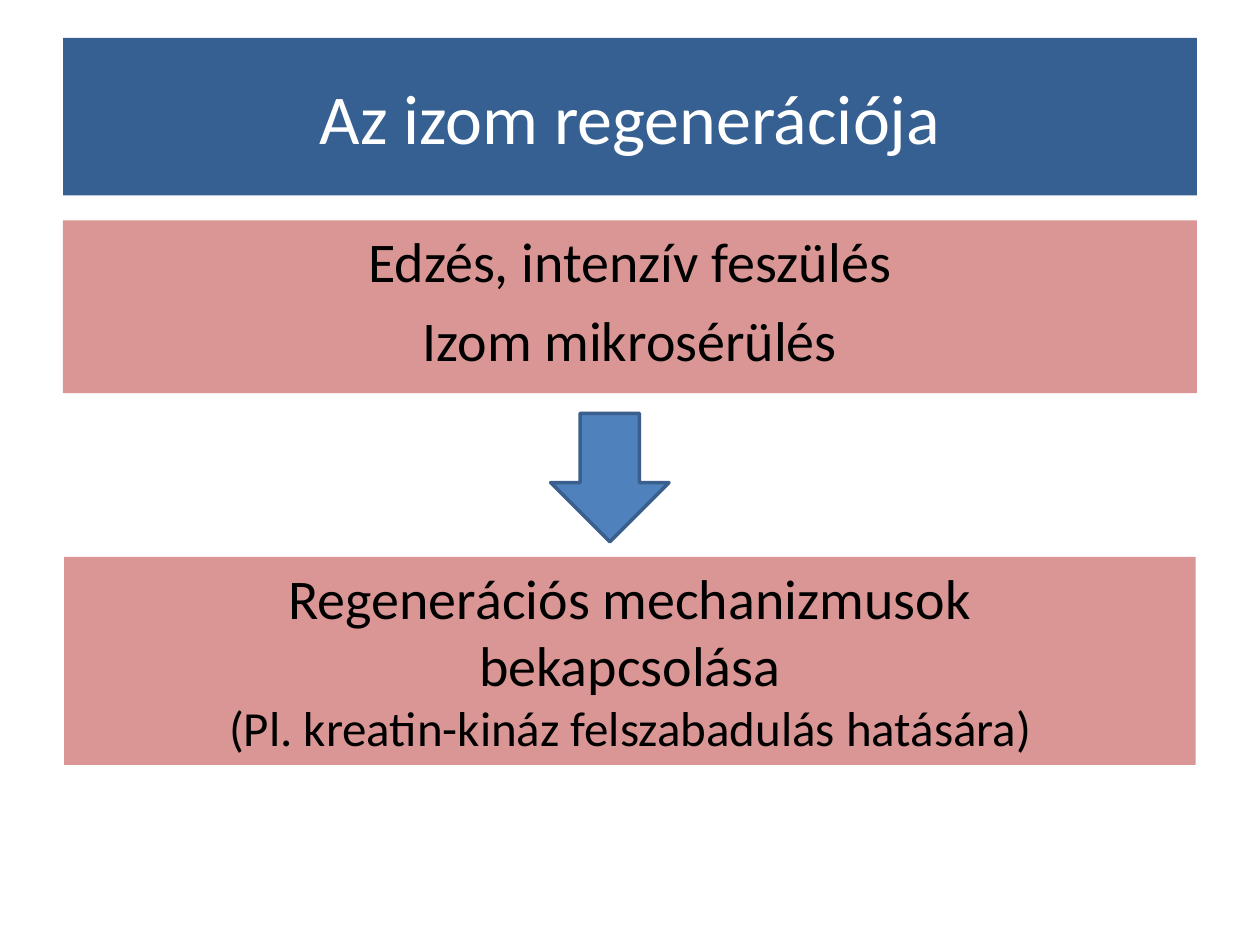
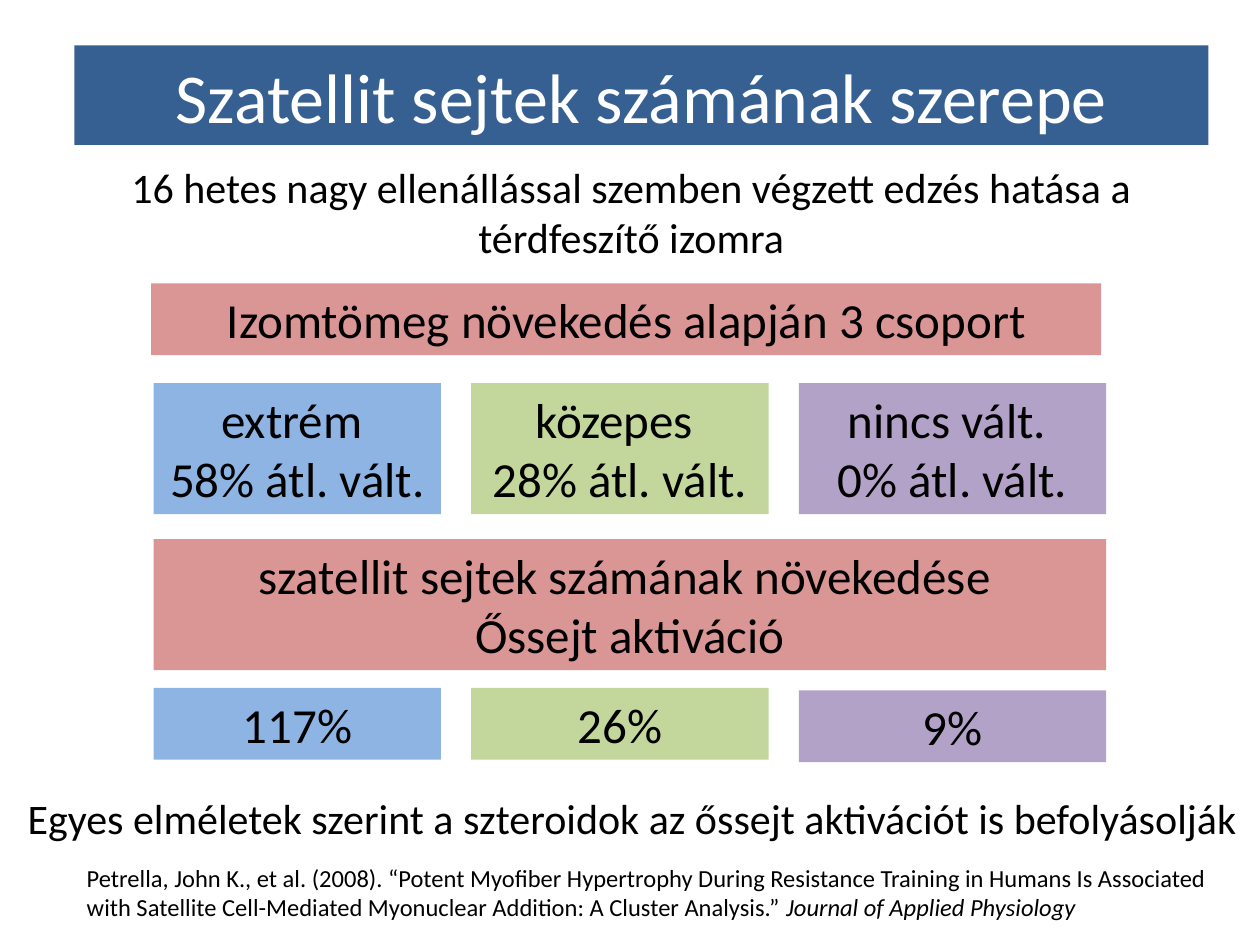
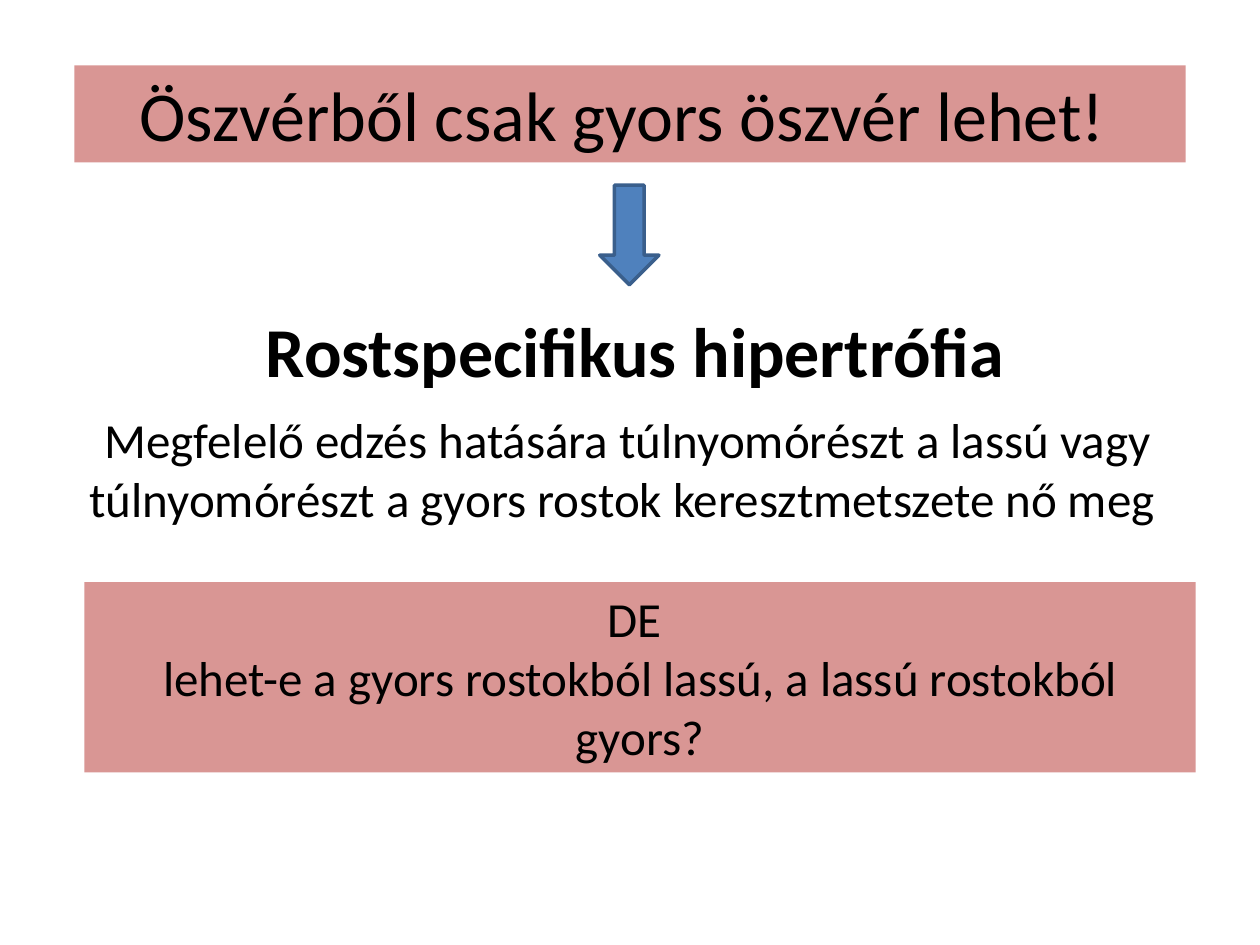
from pptx import Presentation
from pptx.dml.color import RGBColor
from pptx.enum.shapes import MSO_SHAPE
from pptx.enum.text import MSO_ANCHOR, MSO_AUTO_SIZE, PP_ALIGN
from pptx.util import Inches, Pt

RECTANGLE, DOWN_ARROW = MSO_SHAPE.RECTANGLE, MSO_SHAPE.DOWN_ARROW
TOP, MIDDLE = MSO_ANCHOR.TOP, MSO_ANCHOR.MIDDLE
LEFT, CENTER = PP_ALIGN.LEFT, PP_ALIGN.CENTER
FIXED_SIZE = MSO_AUTO_SIZE.NONE

COLORS = {
    "band": "376092", "panel": "D99694", "arrow": "4F81BD", "outline": "3A5F8C",
    "extreme": "8EB4E3", "medium": "C3D69B", "unchanged": "B3A2C7",
    "dark": "000000", "light": "FFFFFF",
}
FONT = "Calibri"
COLUMNS, ROWS = 100, 75
TITLE_ONLY = 5


class SlideBuilder:
    """Hold the shared style and the current slide, and place elements on a grid."""

    def __init__(self):
        self.deck = Presentation()
        self.deck.slide_width, self.deck.slide_height = Inches(10), Inches(7.5)
        self.slide = None

    def new_slide(self):
        self.slide = self.deck.slides.add_slide(self.deck.slide_layouts[TITLE_ONLY])

    def area(self, left, top, width, height):
        column = self.deck.slide_width / COLUMNS
        row = self.deck.slide_height / ROWS
        return [round(length) for length in
                (left * column, top * row, width * column, height * row)]

    def paint(self, shape, color):
        shape.fill.solid()
        shape.fill.fore_color.rgb = RGBColor.from_string(COLORS[color])

    def style(self, span, size, color="dark", bold=False, italic=False):
        span.font.name, span.font.size = FONT, Pt(size)
        span.font.bold, span.font.italic = bold, italic
        span.font.color.rgb = RGBColor.from_string(COLORS[color])

    def fill_text(self, shape, text, size, color="dark", bold=False,
                  align=CENTER, anchor=TOP, gap=0):
        frame = shape.text_frame
        frame.text = text
        frame.word_wrap, frame.auto_size = True, FIXED_SIZE
        frame.vertical_anchor = anchor
        for index, para in enumerate(frame.paragraphs):
            para.alignment = align
            para.space_before = Pt(gap if index else 0)
            for span in para.runs:
                self.style(span, size, color, bold)
        return frame.paragraphs

    def title(self, text, area, fill=None, color="light", bold=False):
        title = self.slide.shapes.title
        title.left, title.top, title.width, title.height = self.area(*area)
        if fill:
            self.paint(title, fill)
        self.fill_text(title, text, 40, color, bold, anchor=MIDDLE)

    def shape(self, kind, area, fill):
        shape = self.slide.shapes.add_shape(kind, *self.area(*area))
        shape.shadow.inherit = False
        self.paint(shape, fill)
        return shape

    def panel(self, text, area, size=28, fill="panel", gap=0):
        box = self.shape(RECTANGLE, area, fill)
        box.line.fill.background()
        return self.fill_text(box, text, size, gap=gap)

    def text(self, text, area, size, align=CENTER):
        box = self.slide.shapes.add_textbox(*self.area(*area))
        return self.fill_text(box, text, size, align=align)

    def arrow(self, area):
        arrow = self.shape(DOWN_ARROW, area, "arrow")
        arrow.line.color.rgb = RGBColor.from_string(COLORS["outline"])
        arrow.line.width = Pt(2)


def regeneration(builder):
    builder.new_slide()
    builder.title("Az izom regenerációja", (5, 3, 90, 12.5), "band")
    builder.panel("Edzés, intenzív feszülés\nIzom mikrosérülés",
                  (5, 17.5, 90, 13.7), 32, gap=6.4)
    builder.arrow((43.7, 32.8, 9.4, 10.2))
    lines = builder.panel("Regenerációs mechanizmusok\nbekapcsolása\n"
                          "(Pl. kreatin-kináz felszabadulás hatására)",
                          (5.1, 44.2, 89.8, 16.5), 32)
    builder.style(lines[-1].runs[0], 28)


def satellite_cells(builder):
    builder.new_slide()
    builder.title("Szatellit sejtek számának szerepe", (5.9, 3.6, 90, 7.9), "band")
    builder.text("16 hetes nagy ellenállással szemben végzett edzés hatása a "
                 "térdfeszítő izomra", (5.1, 12.3, 90, 9.4), 24)
    builder.panel("Izomtömeg növekedés alapján 3 csoport", (12, 22.5, 75.4, 5.7))
    builder.panel("szatellit sejtek számának növekedése \nŐssejt aktiváció",
                  (12.2, 42.8, 75.6, 10.4))

    groups = [
        ("extreme", "extrém \n58% átl. vált.", "117%", 54.6),
        ("medium", "közepes \n28% átl. vált.", "26%", 54.6),
        ("unchanged", "nincs vált. \n0% átl. vált.", "9%", 54.8),
    ]
    left, width, gap, widening = 12.2, 22.8, 2.4, 0.8
    for fill, group, growth, growth_top in groups:
        builder.panel(group, (left, 30.4, width, 10.4), fill=fill)
        builder.panel(growth, (left, growth_top, width, 5.7), fill=fill)
        left += width + gap
        width += widening

    builder.text("Egyes elméletek szerint a szteroidok az őssejt aktivációt is "
                 "befolyásolják", (1.2, 62.4, 98.8, 5), 24, LEFT)
    citation = builder.text(
        "Petrella, John K., et al. (2008). “Potent Myofiber Hypertrophy During "
        "Resistance Training in Humans Is Associated with Satellite Cell-Mediated "
        "Myonuclear Addition: A Cluster Analysis.” ", (5.9, 68, 91.3, 5.7), 14, LEFT)
    journal = citation[0].add_run()
    journal.text = "Journal of Applied Physiology"
    builder.style(journal, 14, italic=True)


def fiber_hypertrophy(builder):
    builder.new_slide()
    builder.title("Rostspecifikus hipertrófia", (5.4, 23.4, 90, 8.6),
                  color="dark", bold=True)
    builder.text("Megfelelő edzés hatására túlnyomórészt a lassú vagy túlnyomórészt "
                 "a gyors rostok keresztmetszete nő meg ", (4.8, 32, 90, 9.4), 28)
    builder.panel("DE \nlehet-e a gyors rostokból lassú, a lassú rostokból gyors?",
                  (6.7, 46.2, 88.2, 15.1))
    builder.panel("Öszvérből csak gyors öszvér lehet! ", (5.9, 5.2, 88.2, 7.7), 40)
    builder.arrow((47.6, 14.7, 4.7, 7.9))


def main():
    builder = SlideBuilder()
    regeneration(builder)
    satellite_cells(builder)
    fiber_hypertrophy(builder)
    builder.deck.save("out.pptx")


if __name__ == "__main__":
    main()
